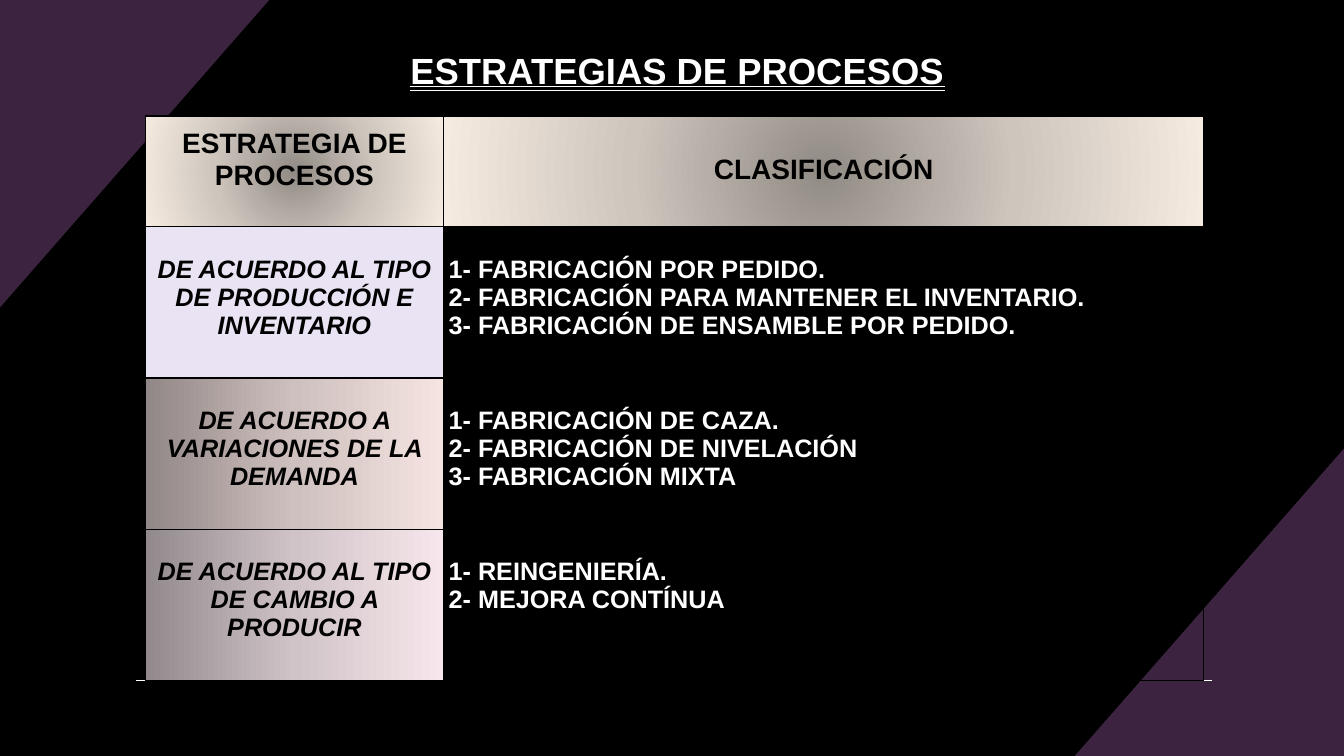
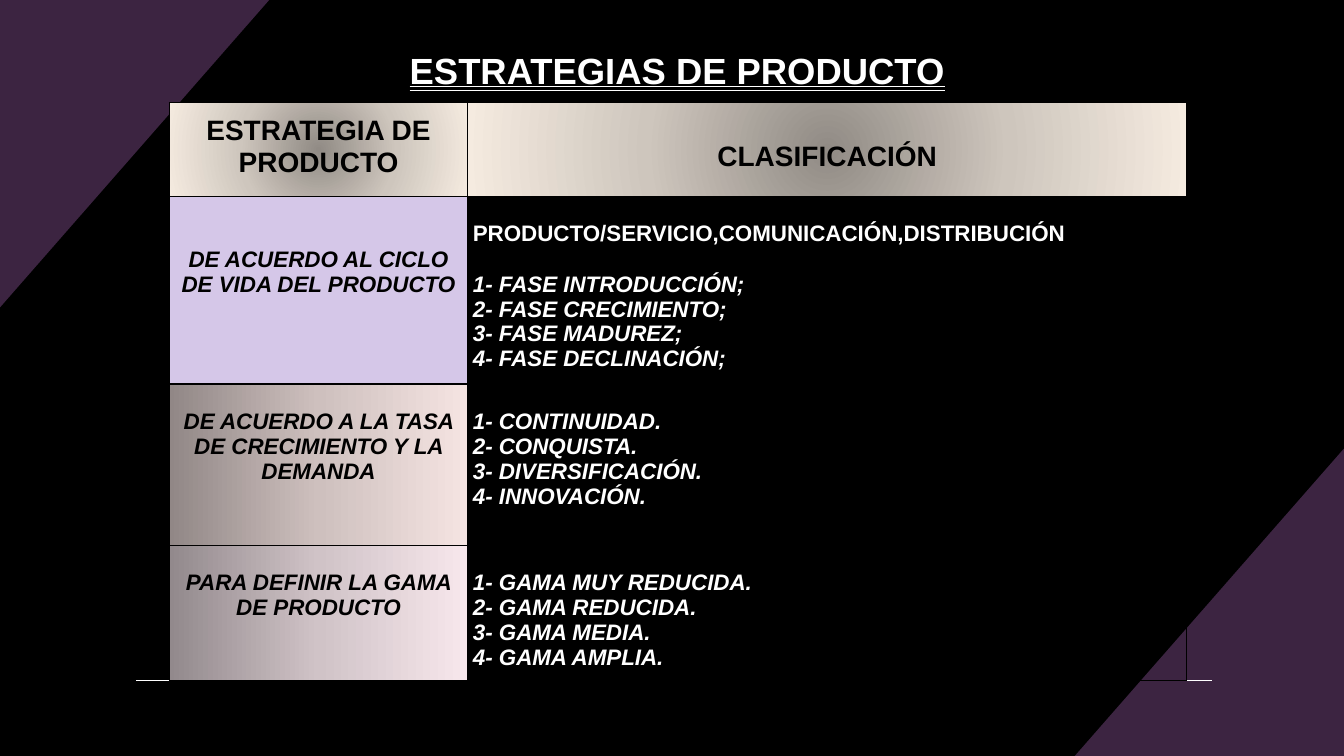
from lxml import etree
from pptx import Presentation
from pptx.dml.color import RGBColor
from pptx.enum.shapes import MSO_CONNECTOR
from pptx.enum.text import MSO_ANCHOR, MSO_AUTO_SIZE, MSO_UNDERLINE, PP_ALIGN
from pptx.oxml import parse_xml
from pptx.oxml.ns import nsdecls, qn
from pptx.util import Inches, Pt

CENTER, LEFT = PP_ALIGN.CENTER, PP_ALIGN.LEFT
MIDDLE, NO_FIT = MSO_ANCHOR.MIDDLE, MSO_AUTO_SIZE.NONE
DOUBLE, STRAIGHT = MSO_UNDERLINE.DOUBLE_LINE, MSO_CONNECTOR.STRAIGHT

SLIDE_W, SLIDE_H = 13.33, 7.5
CORNER_W, CORNER_H = 2.67, 3.05
TABLE_BOTTOM = 6.75
LABEL_W = 2.96
LINE_FACTOR = 1.13
FONT = "Arial"
PLAIN_STYLE = "{2D5ABB26-0587-4C30-8999-92F81FD0307C}"
COLORS = {"black": "000000", "white": "FFFFFF", "corner": "3C2441",
          "lilac_light": "EAE3F4", "lilac": "D5C7E8"}
GRADIENTS = {
    "header": ("918B85", "CEC6BD", "F5EBE0"),
    "peach": ("918786", "CEC0BE", "F5E4E2"),
    "pink": ("92898C", "D0C3C7", "F7E7EC"),
}
RADIAL = ('<a:path path="circle"><a:fillToRect l="50000" t="50000" '
          'r="50000" b="50000"/></a:path>')
LINEAR = '<a:lin ang="0" scaled="0"/>'

# Content: "lead" holds the point sizes of the line gaps above a cell's text
SLIDES = [
    {
        "title": "ESTRATEGIAS DE PROCESOS",
        "left": 1.44, "width": 10.5, "size": 18,
        "heights": [1.1, 1.5, 1.5, 1.5],
        "header": "ESTRATEGIA DE PROCESOS",
        "rows": [
            {"label": "DE ACUERDO AL TIPO DE PRODUCCIÓN E INVENTARIO",
             "fill": "lilac_light",
             "items": ["1- FABRICACIÓN POR PEDIDO.",
                       "2- FABRICACIÓN PARA MANTENER EL INVENTARIO.",
                       "3- FABRICACIÓN DE ENSAMBLE POR PEDIDO."]},
            {"label": "DE ACUERDO A VARIACIONES DE LA DEMANDA",
             "fill": "peach",
             "items": ["1- FABRICACIÓN DE CAZA.",
                       "2- FABRICACIÓN DE NIVELACIÓN",
                       "3- FABRICACIÓN MIXTA"]},
            {"label": "DE ACUERDO AL TIPO DE CAMBIO A PRODUCIR",
             "fill": "pink",
             "items": ["1- REINGENIERÍA.", "2- MEJORA CONTÍNUA"]},
        ],
        "italic_items": False,
    },
    {
        "title": "ESTRATEGIAS DE PRODUCTO",
        "left": 1.68, "width": 10.09, "size": 16,
        "heights": [0.93, 1.86, 1.6, 1.34],
        "header": "ESTRATEGIA DE PRODUCTO",
        "rows": [
            {"label": "DE ACUERDO AL CICLO DE VIDA DEL PRODUCTO",
             "fill": "lilac", "lead": [16, 16],
             "intro": "PRODUCTO/SERVICIO,COMUNICACIÓN,DISTRIBUCIÓN",
             "items": ["1- FASE INTRODUCCIÓN;", "2- FASE CRECIMIENTO;",
                       "3- FASE MADUREZ;", "4- FASE DECLINACIÓN;"]},
            {"label": "DE ACUERDO A LA TASA DE CRECIMIENTO Y LA DEMANDA",
             "fill": "peach",
             "items": ["1- CONTINUIDAD.", "2- CONQUISTA.",
                       "3- DIVERSIFICACIÓN.", "4- INNOVACIÓN."]},
            {"label": "PARA DEFINIR LA GAMA DE PRODUCTO",
             "fill": "pink",
             "items": ["1- GAMA MUY REDUCIDA.", "2- GAMA REDUCIDA.",
                       "3- GAMA MEDIA.", "4- GAMA AMPLIA."]},
        ],
        "italic_items": True,
    },
]


def rgb(name):
    return RGBColor.from_string(COLORS[name])


def add_text(paragraph, text, color, align, **font_format):
    paragraph.alignment = align
    font = paragraph.add_run().font
    paragraph.runs[0].text = text
    font.color.rgb = rgb(color)
    for key, value in {"name": FONT, "bold": True, **font_format}.items():
        setattr(font, key, value)


# Shared backdrop: two opposite corners and the rule under the table
def add_backdrop(slide):
    slide.background.fill.solid()
    slide.background.fill.fore_color.rgb = rgb("black")
    for x, y, step in ((SLIDE_W, SLIDE_H, -1), (0, 0, 1)):
        outline = slide.shapes.build_freeform(Inches(x), Inches(y))
        outline.add_line_segments([
            (Inches(x), Inches(y + step * CORNER_H)),
            (Inches(x + step * CORNER_W), Inches(y))])
        corner = outline.convert_to_shape()
        corner.shadow.inherit = False
        corner.fill.solid()
        corner.fill.fore_color.rgb = rgb("corner")
        corner.line.fill.background()
    rule = slide.shapes.add_connector(
        STRAIGHT, Inches(1.35), Inches(TABLE_BOTTOM),
        Inches(12.02), Inches(TABLE_BOTTOM))
    rule.line.color.rgb = rgb("white")
    rule.line.width = Pt(1)
    etree.SubElement(rule._element.spPr, qn("a:effectLst"))


def set_title(slide, text):
    title = slide.shapes.title
    title.left, title.top = Inches(0.91), Inches(0.42)
    title.width, title.height = Inches(11.62), Inches(0.54)
    frame = title.text_frame
    for key, value in {"word_wrap": True, "auto_size": NO_FIT,
                       "vertical_anchor": MIDDLE}.items():
        setattr(frame, key, value)
    add_text(frame.paragraphs[0], text, "white", CENTER,
             size=Pt(26), underline=DOUBLE)


# Table cells
def style_cell(cell, fill, lead):
    cell.margin_left = cell.margin_right = Inches(0.05)
    cell.margin_top = Pt(round(sum(lead) * LINE_FACTOR, 2))
    cell.margin_bottom = 0
    properties = cell._tc.get_or_add_tcPr()
    for side in ("lnL", "lnR", "lnT", "lnB"):
        properties.append(parse_xml(
            f'<a:{side} {nsdecls("a")} w="{Pt(1)}"><a:solidFill>'
            f'<a:srgbClr val="{COLORS["black"]}"/></a:solidFill></a:{side}>'))
    if fill is None:
        cell.fill.background()
    elif fill in COLORS:
        cell.fill.solid()
        cell.fill.fore_color.rgb = rgb(fill)
    else:
        stops = "".join(
            f'<a:gs pos="{i * 50000}"><a:srgbClr val="{value}"/></a:gs>'
            for i, value in enumerate(GRADIENTS[fill]))
        direction = RADIAL if fill == "header" else LINEAR
        properties.append(parse_xml(
            f'<a:gradFill {nsdecls("a")} rotWithShape="1">'
            f'<a:gsLst>{stops}</a:gsLst>{direction}</a:gradFill>'))


def write_cell(cell, lines, color, align, fill, lead, size):
    style_cell(cell, fill, lead)
    frame = cell.text_frame
    for i, (text, italic, gap) in enumerate(lines):
        paragraph = frame.add_paragraph() if i else frame.paragraphs[0]
        if gap:
            paragraph.space_before = Pt(round(gap * LINE_FACTOR, 2))
        add_text(paragraph, text, color, align, size=Pt(size), italic=italic)


def add_strategies(slide, content):
    heights, size = content["heights"], content["size"]
    total = sum(heights)
    table = slide.shapes.add_table(
        len(heights), 2, Inches(content["left"]),
        Inches(TABLE_BOTTOM - total),
        Inches(content["width"]), Inches(total)).table
    table.first_row = table.horz_banding = False
    table._tbl.tblPr.find(qn("a:tableStyleId")).text = PLAIN_STYLE
    for column, width in zip(table.columns,
                             (LABEL_W, content["width"] - LABEL_W)):
        column.width = Inches(width)
    for row, height in zip(table.rows, heights):
        row.height = Inches(height)

    headers = ((content["header"], [8]), ("CLASIFICACIÓN", [8, 16]))
    for column, (text, lead) in enumerate(headers):
        write_cell(table.cell(0, column), [(text, False, 0)], "black",
                   CENTER, "header", lead, 20)
    for i, row in enumerate(content["rows"], start=1):
        write_cell(table.cell(i, 0), [(row["label"], True, 0)], "black",
                   CENTER, row["fill"], row.get("lead", [size]), size)
        lines = [(item, content["italic_items"], 0) for item in row["items"]]
        if "intro" in row:
            first, italic, _ = lines[0]
            lines[:1] = [(row["intro"], False, 0), (first, italic, size)]
        write_cell(table.cell(i, 1), lines, "white", LEFT, None, [size], size)


def main():
    deck = Presentation()
    deck.slide_width, deck.slide_height = Inches(SLIDE_W), Inches(SLIDE_H)
    title_only = deck.slide_layouts[5]
    for content in SLIDES:
        slide = deck.slides.add_slide(title_only)
        add_backdrop(slide)
        set_title(slide, content["title"])
        add_strategies(slide, content)
    deck.save("out.pptx")


if __name__ == "__main__":
    main()
